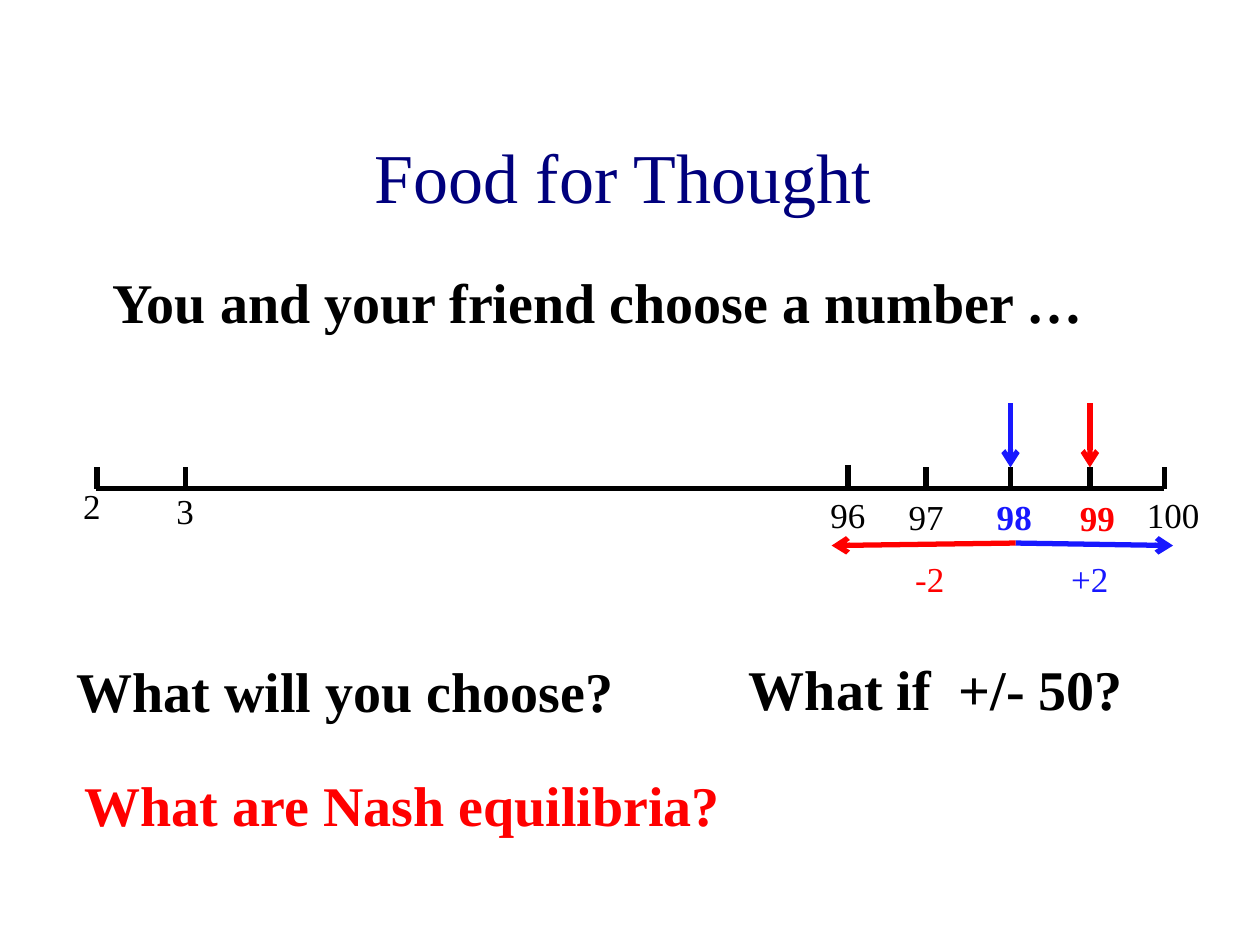
from dataclasses import dataclass

from lxml import etree
from pptx import Presentation
from pptx.dml.color import RGBColor
from pptx.enum import shapes, text
from pptx.oxml import ns
from pptx.util import Inches, Pt


@dataclass(frozen=True)
class Theme:
    font: str = "Times New Roman"
    navy: str = "00007D"
    black: str = "000000"
    blue: str = "1818FF"
    red: str = "FF0000"
    title: int = 40
    statement: int = 32
    label: int = 20
    line: int = 3


T = Theme()

prs = Presentation()
prs.slide_width, prs.slide_height = Inches(10), Inches(7.5)
s = prs.slides.add_slide(prs.slide_layouts[6])


def add_text(words, left, top, width, height, size, color, bold=False):
    sp = s.shapes.add_textbox(Inches(left), Inches(top), Inches(width), Inches(height))
    tf = sp.text_frame
    tf.word_wrap = False
    tf.vertical_anchor = text.MSO_ANCHOR.MIDDLE
    p = tf.paragraphs[0]
    p.text = words
    p.alignment = text.PP_ALIGN.CENTER
    p.font.name, p.font.size, p.font.bold = T.font, Pt(size), bold
    p.font.color.rgb = RGBColor.from_string(color)


def add_line(x1, y1, x2, y2, color, arrow=False):
    line = s.shapes.add_connector(
        shapes.MSO_CONNECTOR.STRAIGHT, Inches(x1), Inches(y1), Inches(x2), Inches(y2))
    line.line.width = Pt(T.line)
    line.line.color.rgb = RGBColor.from_string(color)
    if arrow:
        etree.SubElement(line.line._get_or_add_ln(), ns.qn("a:tailEnd"), type="arrow")
    etree.SubElement(line._element.spPr, ns.qn("a:effectLst"))


add_text("Food for Thought", 0.44, 0.64, 9, 1.5, T.title, T.navy)

# Statements and questions
for words, left, top, width, color in [
    ("You and your friend choose a number …", 0.76, 2.07, 7.98, T.black),
    ("What will you choose?", 0.49, 5.16, 4.5, T.black),
    ("What if  +/- 50?", 5.83, 5.14, 3.2, T.black),
    ("What are Nash equilibria?", 0.55, 6.06, 5.29, T.red),
]:
    add_text(words, left, top, width, 0.64, T.statement, color, bold=True)

# Number line: number, tick x, tick top, label centre x, label top, colour
AXIS_Y, TICK, LABEL_H = 3.88, 0.17, 0.44
add_line(0.76, AXIS_Y, 9.24, AXIS_Y, T.black)
for number, x, tick_top, label_x, label_top, color in [
    ("2", 0.77, 3.71, 0.73, 3.79, T.black),
    ("3", 1.47, 3.71, 1.47, 3.83, T.black),
    ("96", 6.73, 3.69, 6.73, 3.86, T.black),
    ("97", 7.35, 3.71, 7.35, 3.88, T.black),
    ("98", 8.02, 3.71, 8.05, 3.88, T.blue),
    ("99", 8.65, 3.71, 8.71, 3.89, T.red),
    ("100", 9.24, 3.71, 9.31, 3.86, T.black),
]:
    chosen = color != T.black
    width = 0.2 + 0.14 * len(number)
    add_line(x, tick_top, x, tick_top + TICK, T.black)
    add_text(number, label_x - width / 2, label_top, width, LABEL_H, T.label, color, chosen)
    if chosen:
        add_line(x, 3.2, x, tick_top, color, arrow=True)

# Payoff change for each player
for change, tip_x, label_x, width, color in [
    ("+2", 9.31, 8.4, 0.5, T.blue),
    ("-2", 6.6, 7.16, 0.44, T.red),
]:
    add_line(8.06, 4.31, tip_x, 4.33, color, arrow=True)
    add_text(change, label_x, 4.37, width, LABEL_H, T.label, color)

prs.save("out.pptx")
